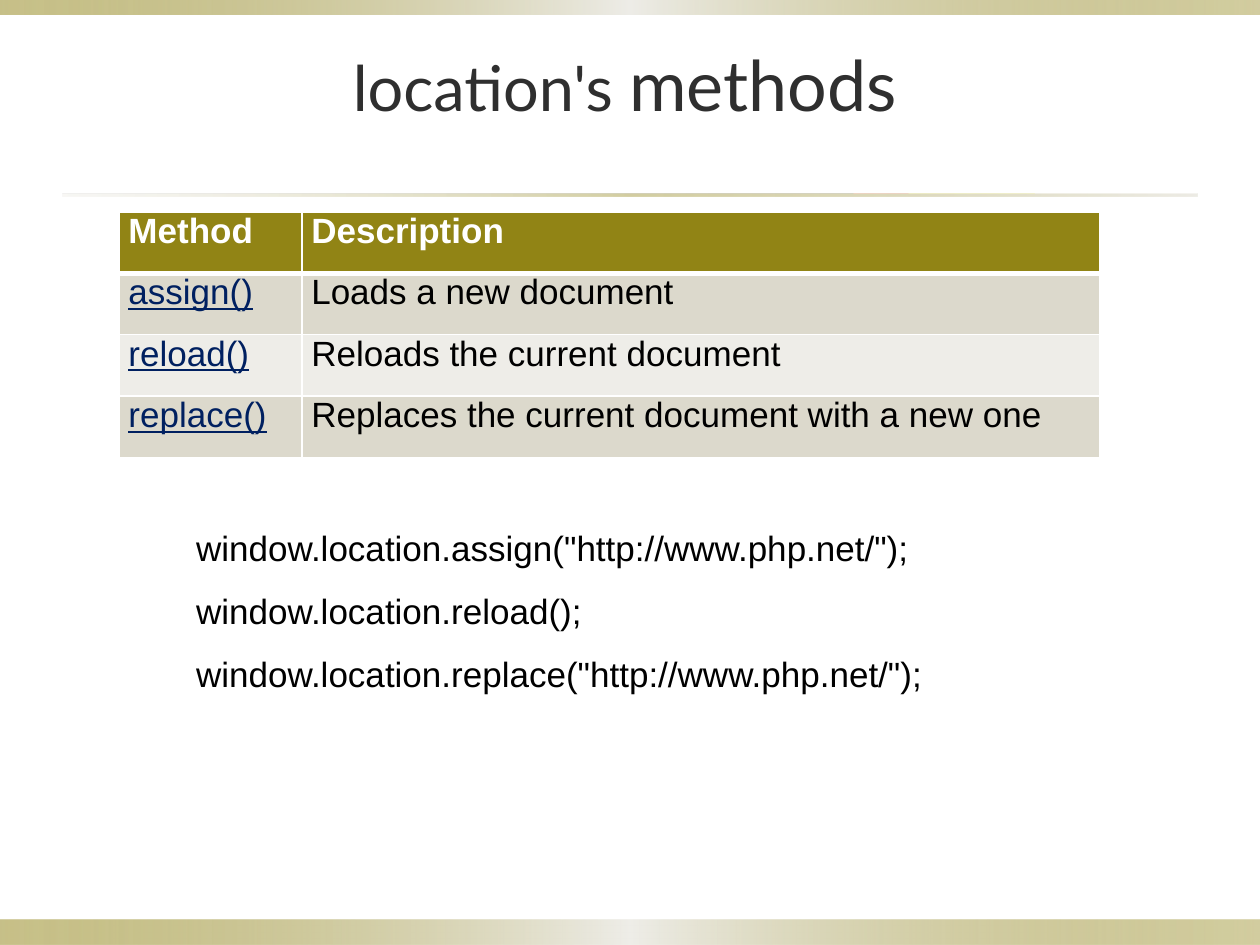
from lxml import etree
from pptx import Presentation
from pptx.dml.color import RGBColor
from pptx.enum.shapes import MSO_SHAPE
from pptx.enum.text import MSO_ANCHOR, PP_ALIGN
from pptx.oxml.ns import qn
from pptx.util import Pt

RECTANGLE = MSO_SHAPE.RECTANGLE
MIDDLE = MSO_ANCHOR.MIDDLE
CENTER = PP_ALIGN.CENTER

OLIVE, SAND, PALE, WHITE = "918415", "DCD9CC", "EEEDE8", "FFFFFF"
NAVY, BLACK, CHARCOAL = "002060", "000000", "2F2F2F"

# Gradient stops: position, colour, opacity, all but the colour in percent
BAND_STOPS = [(0, OLIVE, 50), (50, PALE, 100), (100, OLIVE, 40)]
RULE_STOPS = [(0, SAND, 20), (50, OLIVE, 40), (100, SAND, 50)]

METHODS = [
    ("Method", "Description"),
    ("assign()", "Loads a new document"),
    ("reload()", "Reloads the current document"),
    ("replace()", "Replaces the current document with a new one"),
]
CODE = [
    'window.location.assign("http://www.php.net/");',
    "window.location.reload();",
    'window.location.replace("http://www.php.net/");',
]


def color(value):
    return RGBColor.from_string(value)


def set_font(font, name, size, value):
    font.name = name
    font.size = Pt(size)
    font.color.rgb = color(value)


def add_xml_color(parent, value, opacity=100):
    node = etree.SubElement(parent, qn("a:srgbClr"), val=value)
    if opacity < 100:
        etree.SubElement(node, qn("a:alpha"), val=str(opacity * 1000))


def add_gradient_bar(slide, left, top, width, height, stops):
    bar = slide.shapes.add_shape(RECTANGLE, Pt(left), Pt(top), Pt(width), Pt(height))
    bar.shadow.inherit = False
    bar.line.fill.background()
    bar.fill.gradient()
    bar.fill.gradient_angle = 0
    stop_list = bar.element.spPr.find(qn("a:gradFill")).find(qn("a:gsLst"))
    for old_stop in list(stop_list):
        stop_list.remove(old_stop)
    for position, value, opacity in stops:
        stop = etree.SubElement(stop_list, qn("a:gs"), pos=str(position * 1000))
        add_xml_color(stop, value, opacity)


def add_text_box(slide, left, top, width, height):
    box = slide.shapes.add_textbox(Pt(left), Pt(top), Pt(width), Pt(height))
    box.text_frame.word_wrap = True
    return box.text_frame


def add_title(slide):
    frame = add_text_box(slide, 33, 9.5, 648, 77)
    frame.vertical_anchor = MIDDLE
    para = frame.paragraphs[0]
    para.alignment = CENTER
    for text, size in (("location's ", 36), ("methods", 40)):
        span = para.add_run()
        span.text = text
        set_font(span.font, "Lato", size, CHARCOAL)


def set_borders(cell, bottom_width):
    properties = cell._tc.get_or_add_tcPr()
    widths = {"a:lnL": 1, "a:lnR": 1, "a:lnT": 1, "a:lnB": bottom_width}
    for index, (tag, width) in enumerate(widths.items()):
        line = etree.Element(qn(tag), w=str(Pt(width)))
        add_xml_color(etree.SubElement(line, qn("a:solidFill")), WHITE)
        properties.insert(index, line)


def fill_cell(cell, text, row, column):
    header = row == 0
    cell.fill.solid()
    cell.fill.fore_color.rgb = color(OLIVE if header else SAND if row % 2 else PALE)
    cell.margin_left = Pt(5.4)
    cell.margin_top = cell.margin_right = cell.margin_bottom = 0
    set_borders(cell, 3 if header else 1)
    para = cell.text_frame.paragraphs[0]
    para.text = text
    is_method = column == 0 and not header
    set_font(para.font, "Arial", 20, WHITE if header else NAVY if is_method else BLACK)
    para.font.bold = header
    para.font.underline = is_method


def add_method_table(slide):
    widths, row_height = (104.5, 456), 35.1
    table = slide.shapes.add_table(
        len(METHODS), len(widths), Pt(68), Pt(121),
        Pt(sum(widths)), Pt(row_height * len(METHODS)),
    ).table
    for column, width in zip(table.columns, widths):
        column.width = Pt(width)
    for row, texts in enumerate(METHODS):
        table.rows[row].height = Pt(row_height)
        for column, text in enumerate(texts):
            fill_cell(table.cell(row, column), text, row, column)


def add_code(slide):
    frame = add_text_box(slide, 105, 297.5, 446, 104.5)
    for index, text in enumerate(CODE):
        para = frame.add_paragraph() if index else frame.paragraphs[0]
        para.text = text
        set_font(para.font, "Arial", 20, BLACK)
        if index:
            para.space_before = Pt(12)


def main():
    deck = Presentation()
    deck.slide_width, deck.slide_height = Pt(720), Pt(540)
    slide = deck.slides.add_slide(deck.slide_layouts[6])
    add_gradient_bar(slide, 0, 525.6, 720, 14.4, BAND_STOPS)
    add_gradient_bar(slide, 0, 0, 720, 8.6, BAND_STOPS)
    add_gradient_bar(slide, 36, 110.9, 648, 1.5, RULE_STOPS)
    add_title(slide)
    add_method_table(slide)
    add_code(slide)
    deck.save("out.pptx")


if __name__ == "__main__":
    main()
